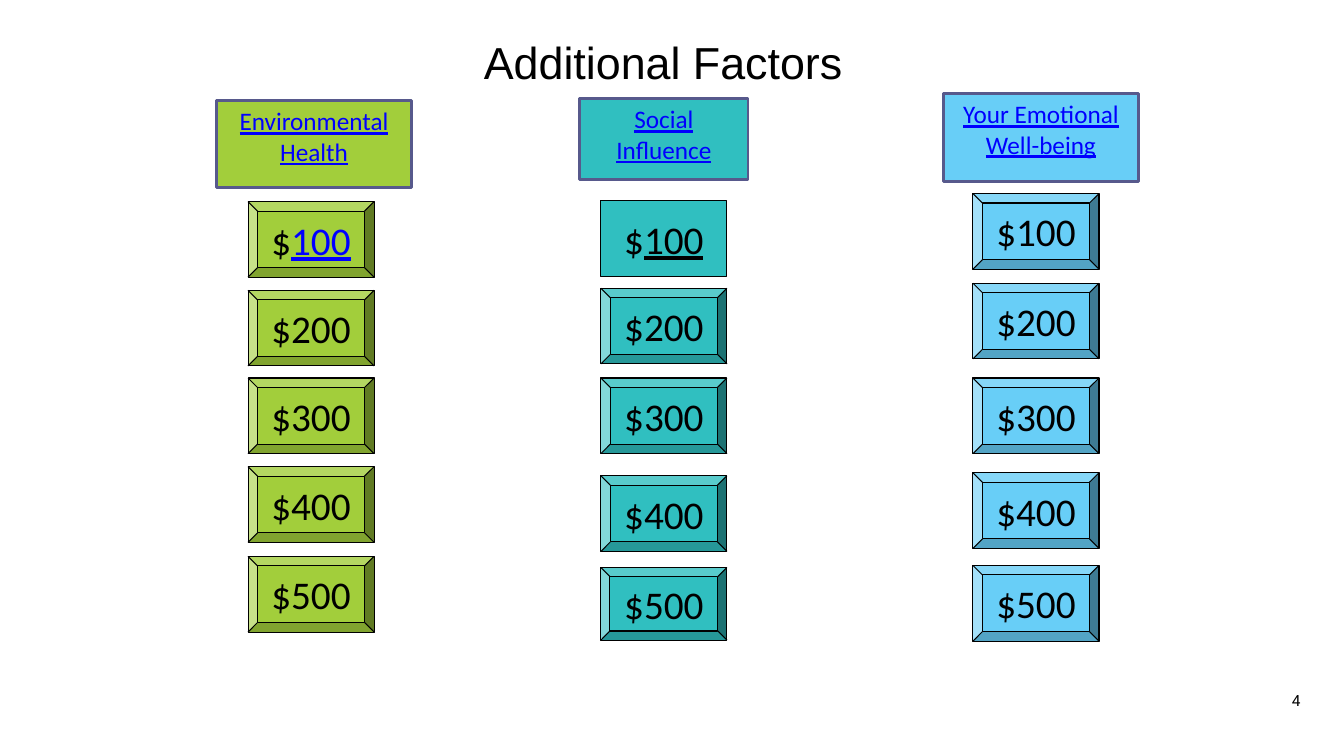
"""Build the "Additional Factors" quiz board slide."""
import pptx
import pptx.util
import pptx.dml.color
import pptx.enum.shapes
import pptx.enum.text
from dataclasses import dataclass

PX = 9144
SHAPES = pptx.enum.shapes.MSO_SHAPE
ANCHOR = pptx.enum.text.MSO_ANCHOR


@dataclass(frozen=True)
class Theme:
    ink: str = "000000"
    link: str = "0000FF"
    frame: str = "57598C"
    green: str = "A2CE3B"
    teal: str = "30BFC0"
    sky: str = "68CEF7"
    heading_font: str = "Arial"
    board_font: str = "Calibri"
    number_font: str = "Roboto"
    heading_size: int = 32
    category_size: int = 18
    prize_size: int = 28
    number_size: int = 11


theme = Theme()


def write(shape, text, font, size, color=theme.ink, underline=None, anchor=ANCHOR.TOP):
    """Set centred text in a shape and format its run."""
    frame = shape.text_frame
    frame.text = text
    frame.word_wrap = True
    frame.vertical_anchor = anchor
    paragraph = frame.paragraphs[0]
    paragraph.alignment = pptx.enum.text.PP_ALIGN.CENTER
    paragraph.font.name = font
    paragraph.font.size = pptx.util.Pt(size)
    run = paragraph.runs[0]
    run.font.name = font
    run.font.size = pptx.util.Pt(size)
    run.font.color.rgb = pptx.dml.color.RGBColor.from_string(color)
    run.font.underline = underline
    return paragraph


def add_box(kind, box, fill, line, width):
    """Add a filled and outlined shape without a shadow."""
    shape = slide.shapes.add_shape(kind, *[length * PX for length in box])
    shape.shadow.inherit = False
    shape.fill.solid()
    shape.fill.fore_color.rgb = pptx.dml.color.RGBColor.from_string(fill)
    shape.line.color.rgb = pptx.dml.color.RGBColor.from_string(line)
    shape.line.width = pptx.util.Pt(width)
    return shape


deck = pptx.Presentation()
deck.slide_width, deck.slide_height = 1333 * PX, 750 * PX
slide = deck.slides.add_slide(deck.slide_layouts[5])

heading = slide.shapes.title
heading.left, heading.top, heading.width, heading.height = (
    length * PX for length in (250, 29, 816, 64))
write(heading, "Additional Factors", theme.heading_font, theme.heading_size,
      anchor=ANCHOR.MIDDLE)

TILE_WIDTH, TILE_HEIGHT, LAST_TEAL_HEIGHT = 125, 75, 72
categories = [
    ("Environmental Health", theme.green, (215, 100, 193, 86),
     246, (200, 288, 375, 463, 552), theme.link),
    ("Social Influence", theme.teal, (575, 98, 167, 80),
     596, (199, 286, 375, 472, 563), theme.ink),
    ("Your Emotional Well-being", theme.sky, (936, 93, 193, 87),
     965, (192, 281, 375, 469, 561), None),
]

for category, fill, header_box, tile_left, tile_tops, first_color in categories:
    header = add_box(SHAPES.RECTANGLE, header_box, fill, theme.frame, 2)
    write(header, category, theme.board_font, theme.category_size, theme.link, True)

    for level, tile_top in enumerate(tile_tops, start=1):
        prize = str(level * 100)
        flat = fill == theme.teal and level == 1
        short = fill == theme.teal and level == 5
        tile_box = (tile_left, tile_top, TILE_WIDTH,
                    LAST_TEAL_HEIGHT if short else TILE_HEIGHT)
        tile = add_box(SHAPES.RECTANGLE if flat else SHAPES.BEVEL,
                       tile_box, fill, theme.ink, 0.75)
        linked = level == 1 and first_color is not None
        label = write(tile, "$" if linked else "$" + prize, theme.board_font,
                      theme.prize_size, anchor=ANCHOR.MIDDLE)
        if linked:
            amount = label.add_run()
            amount.text = prize
            amount.font.name = theme.board_font
            amount.font.size = pptx.util.Pt(theme.prize_size)
            amount.font.color.rgb = pptx.dml.color.RGBColor.from_string(first_color)
            amount.font.underline = True

page_number = slide.shapes.add_textbox(*[length * PX for length in (1272, 682, 27, 26)])
write(page_number, "4", theme.number_font, theme.number_size)
page_frame = page_number.text_frame
page_frame.margin_left = page_frame.margin_right = 4 * PX
page_frame.margin_top = page_frame.margin_bottom = 4 * PX

deck.save("out.pptx")
